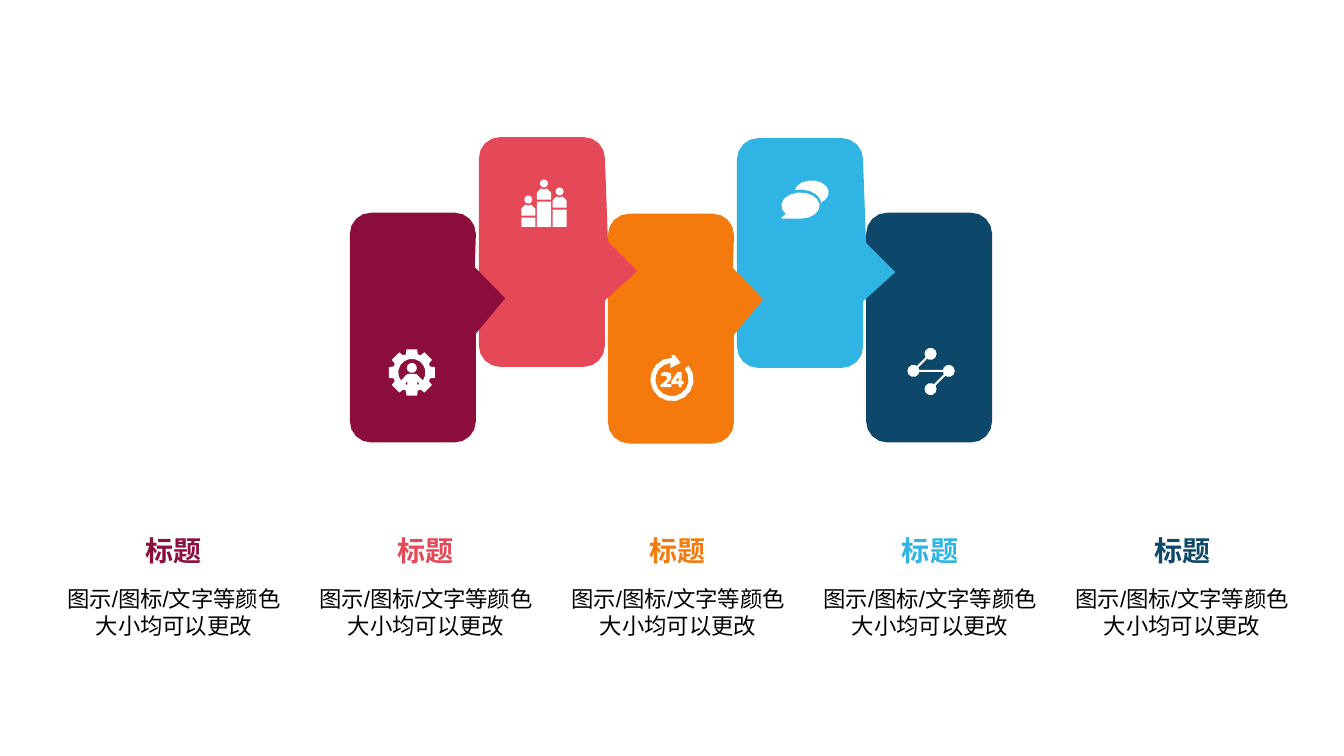
from math import ceil, cos, hypot, radians, sin

from pptx import Presentation
from pptx.dml.color import RGBColor as RGB
from pptx.enum.text import PP_ALIGN as Align
from pptx.util import Inches, Pt

WINE = RGB(0x8C, 0x0E, 0x3D)
ROSE = RGB(0xE5, 0x48, 0x57)
ORANGE = RGB(0xF4, 0x7A, 0x0D)
SKY = RGB(0x30, 0xB4, 0xE4)
NAVY = RGB(0x0D, 0x47, 0x69)
WHITE = RGB(0xFF, 0xFF, 0xFF)
BLACK = RGB(0, 0, 0)
FONT = "Arial"
HEAD = "标题"
BODY = "图示/图标/文字等颜色大小均可以更改"

LOW = [(1.24, 0.54), (1.54, 0.85), (1.25, 1.2)]
HIGH = [(1.28, 1.04), (1.57, 1.33), (1.25, 1.62)]


def arc(x, y, rx, ry, start, end, step=24):
    """Points on an ellipse, with angles in degrees clockwise from the right."""
    count = ceil(abs(end - start) / step)
    turns = [radians(start + (end - start) * i / count) for i in range(count + 1)]
    return [(x + rx * cos(t), y + ry * sin(t)) for t in turns]


def disc(x, y, r):
    return arc(x, y, r, r, 0, 360, 36)[:-1]


def rect(x, y, w, h):
    return [(x, y), (x + w, y), (x + w, y + h), (x, y + h)]


def draw(slide, left, top, loops, color):
    """Draw closed loops, in inches from left and top, as one filled shape."""
    loops = [[(Inches(left + x), Inches(top + y)) for x, y in loop] for loop in loops]
    pen = slide.shapes.build_freeform(*loops[0][0], scale=1.0)
    for i, loop in enumerate(loops):
        if i:
            pen.move_to(*loop[0])
        pen.add_line_segments(loop[1:], close=True)
    shape = pen.convert_to_shape()
    shape.shadow.inherit = False
    shape.fill.solid()
    shape.fill.fore_color.rgb = color
    shape.line.fill.background()


def card(notch):
    """A rounded card whose right edge follows the notch points."""
    w, h, r = 1.25, 2.28, 0.21
    return [arc(r, r, r, r, 180, 270) + arc(w - r, r, r, r, 270, 360) + notch
            + arc(w - r, h - r, r, r, 0, 90) + arc(r, h - r, r, r, 90, 180)]


def gear():
    mid, root, tip = 0.235, 0.19, 0.235
    rim = []
    for turn in range(0, 360, 45):
        for shift, r in ((-18, root), (-13, tip), (13, tip), (18, root)):
            angle = radians(turn + shift)
            rim.append((mid + r * cos(angle), mid + r * sin(angle)))
    hole = arc(mid, mid, 0.135, 0.135, 144, 396)
    hole += [(0.29, 0.26), (0.28, 0.25), (0.2, 0.25), (0.18, 0.26)]
    arms = [[(0.29, 0.32), (0.29, 0.36), (0.31, 0.35)],
            [(0.19, 0.32), (0.17, 0.35), (0.19, 0.36)]]
    return [rim, hole, disc(mid, 0.19, 0.05)] + arms


def crowd():
    """Three people, each on a block of its own height."""
    loops = []
    for i, top in enumerate((0.37, 0.21, 0.29)):
        x, neck, hip = 0.155 * i, top - 0.13, top - 0.02
        bust = [(0, hip), (0, neck + 0.04), (0.04, neck), (0.07, neck + 0.01),
                (0.1, neck), (0.14, neck + 0.04), (0.14, hip)]
        loops += [rect(x, top, 0.14, 0.46 - top),
                  [(x + dx, y) for dx, y in bust],
                  disc(x + 0.07, top - 0.18, 0.04)]
    return loops


def clock():
    """An open ring with an arrowhead around the figure 24."""
    x, y = 0.215, 0.255
    ring = arc(x, y, 0.215, 0.215, -40, 270)
    ring += [(0.21, 0.01), (0.24, 0.01), (0.3, 0.09), (0.2, 0.14), (0.2, 0.09)]
    ring += arc(x, y, 0.165, 0.165, 265, -40)
    two = [(0.1, 0.33), (0.21, 0.33), (0.21, 0.3), (0.16, 0.3), (0.2, 0.26),
           (0.21, 0.23), (0.2, 0.19), (0.15, 0.18), (0.11, 0.19), (0.11, 0.22),
           (0.15, 0.22), (0.17, 0.23), (0.16, 0.26), (0.1, 0.31)]
    four = [(0.27, 0.18), (0.31, 0.18), (0.31, 0.27), (0.33, 0.27), (0.33, 0.3),
            (0.31, 0.3), (0.31, 0.33), (0.28, 0.33), (0.28, 0.3), (0.21, 0.3),
            (0.21, 0.27)]
    return [ring, two, four, [(0.28, 0.23), (0.25, 0.27), (0.28, 0.27)]]


def chat():
    front = arc(0.19, 0.25, 0.19, 0.13, 140, 450) + [(0.01, 0.38), (0, 0.37)]
    back = arc(0.3, 0.12, 0.17, 0.12, 190, 420) + arc(0.19, 0.24, 0.21, 0.15, 355, 256)
    return [front, back]


def web():
    """Four nodes joined in a Z by thin links."""
    r, half = 0.06, 0.01
    nodes = [(0.23, 0.06), (0.06, 0.23), (0.41, 0.23), (0.23, 0.41)]
    loops = [disc(x, y, r) for x, y in nodes]
    for (x1, y1), (x2, y2) in zip(nodes, nodes[1:]):
        span = hypot(x2 - x1, y2 - y1)
        ux, uy = (x2 - x1) / span, (y2 - y1) / span
        ends = ((r, half), (span - r, half), (span - r, -half), (r, -half))
        loops.append([(x1 + ux * a - uy * b, y1 + uy * a + ux * b) for a, b in ends])
    return loops


def write(slide, box, text, size, color, bold=False, wrap=True):
    frame = slide.shapes.add_textbox(*map(Inches, box)).text_frame
    frame.word_wrap = wrap
    par = frame.paragraphs[0]
    par.text = text
    par.alignment = Align.CENTER
    font = par.font
    font.name, font.size, font.bold = FONT, Pt(size), bold
    font.color.rgb = color


def label(slide, left, top, color):
    width, head = 2.39, 0.76
    write(slide, (left + (width - head) / 2, top, head, 0.44), HEAD, 20, color, True, False)
    write(slide, (left, top + 0.52, width, 0.64), BODY, 16, BLACK)


def main():
    deck = Presentation()
    deck.slide_width, deck.slide_height = Inches(13.33), Inches(7.5)
    slide = deck.slides.add_slide(deck.slide_layouts[6])
    # Colour, card top, notch, icon, icon place
    steps = [
        (WINE, 2.11, LOW, gear, (3.85, 3.46)),
        (ROSE, 1.36, HIGH, crowd, (5.17, 1.79)),
        (ORANGE, 2.12, LOW, clock, (6.45, 3.51)),
        (SKY, 1.37, HIGH, chat, (7.75, 1.79)),
        (NAVY, 2.11, [], web, (9, 3.45)),
    ]
    # Right to left, so each notch lies over the next card
    for i, (color, top, notch, _, _) in reversed(list(enumerate(steps))):
        draw(slide, 3.47 + 1.28 * i, top, card(notch), color)
    for i, (color, _, _, icon, place) in enumerate(steps):
        draw(slide, *place, icon(), WHITE)
        label(slide, 0.53 + 2.5 * i, 5.24, color)
    deck.save("out.pptx")


if __name__ == "__main__":
    main()
